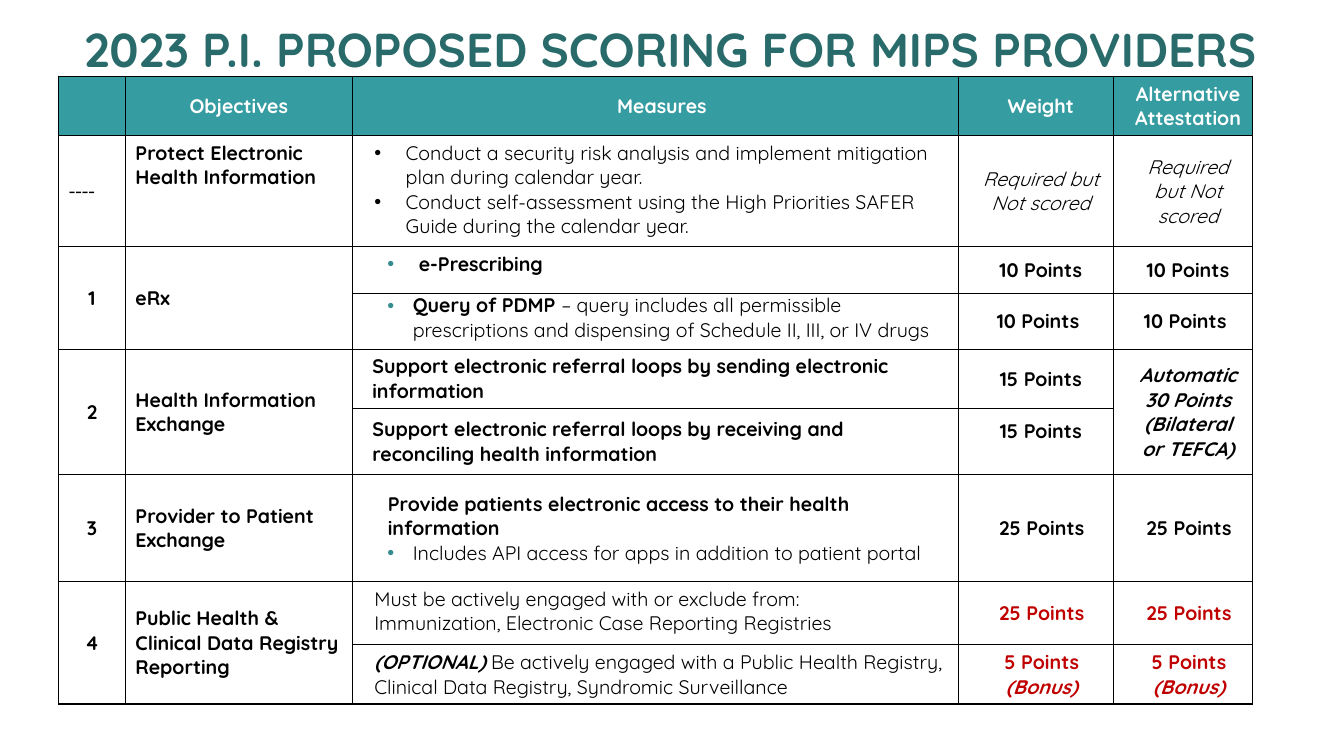
import pptx
import pptx.util
import pptx.dml.color
import pptx.enum.text
import pptx.oxml.ns
import lxml.etree

Cm, Pt = pptx.util.Cm, pptx.util.Pt
ALIGN = pptx.enum.text.PP_ALIGN
ANCHOR = pptx.enum.text.MSO_ANCHOR

# Content
HUES = {"title": "296A6B", "head": "359CA1", "dot": "368D8F", "red": "C00000",
        "ink": "000000", "white": "FFFFFF"}
TITLE = "2023 P.I. PROPOSED SCORING FOR MIPS PROVIDERS"
COLS = [1.68, 5.72, 15.27, 3.91, 3.51]
ROWS = [1.5, 2.8, 1.17, 1.41, 1.49, 1.67, 2.7, 1.59, 1.49]

# Paragraph layouts: left indent, first line, bullet hue
DENTS = {
    "flat": (0, 0, None), "head": (1.3, -0.97, None),
    "near": (0.25, 0, None), "mid": (0.3, 0, None), "far": (0.64, 0, None),
    "black": (1.09, -0.79, "ink"), "wide": (1.42, -0.79, "dot"),
    "teal": (1.27, -0.64, "dot"),
}

# Each cell is a list of (layout, (text, style), ...)
# Styles: b bold, i italic, r red, w white, s serif
BONUS = [("mid", ("5 Points", "br")), ("mid", ("(Bonus)", "bir"))]
TEN = [("near", ("10 Points", "b"))]
TEN_B = [("near", ("10 Points ", "b"))]
FIFTEEN = [("near", ("15 Points", "b"))]
FULL = [("mid", ("25 Points", "b"))]
FULL_R = [("mid", ("25 Points", "br"))]
GRID = [
    [None, [("flat", ("Objectives", "bw"))], [("head", ("Measures", "bw"))],
     [("near", ("Weight", "bw"))],
     [("near", ("Alternative ", "bw")), ("near", ("Attestation", "bw"))]],
    [[("flat", ("----", "s"))],
     [("flat", ("Protect Electronic Health Information", "b"))],
     [("black", ("Conduct a security risk analysis and implement mitigation plan during calendar year.", "")),
      ("black", ("Conduct self-assessment using the High Priorities SAFER Guide during the calendar year.", ""))],
     [("near", ("Required but\vNot scored", "i"))],
     [("near", ("Required but Not scored", "i"))]],
    [[("flat", ("1", "b"))], [("flat", ("eRx", "b"))],
     [("wide", ("e-Prescribing", "b"))], TEN, TEN],
    [None, None,
     [("teal", ("Query of PDMP ", "b"),
       ("– query includes all permissible prescriptions and dispensing of Schedule II, III, or IV drugs", ""))],
     TEN_B, TEN_B],
    [[("flat", ("2", "b"))], [("flat", ("Health Information Exchange", "b"))],
     [("near", ("Support electronic referral loops by sending electronic information", "b"))],
     FIFTEEN,
     [("near", ("Automatic 30 Points", "bi")), ("near", ("(Bilateral or TEFCA)", "bi"))]],
    [None, None,
     [("near", ("Support electronic referral loops by receiving and reconciling health information", "b"))],
     FIFTEEN, None],
    [[("flat", ("3", "b"))], [("flat", ("Provider to Patient Exchange", "b"))],
     [("far", ("Provide patients electronic access to their health information", "b")),
      ("teal", ("Includes API access for apps in addition to patient portal", ""))],
     FULL, FULL],
    [[("flat", ("4", "b"))],
     [("flat", ("Public Health & Clinical Data Registry Reporting", "b"))],
     [("mid", ("Must be actively engaged with or exclude from:", "")),
      ("mid", ("Immunization, Electronic Case Reporting Registries", ""))],
     FULL_R, FULL_R],
    [None, None,
     [("mid", ("(OPTIONAL)", "bi"),
       (" Be actively engaged with a Public Health Registry, Clinical Data Registry, Syndromic Surveillance", ""))],
     BONUS, BONUS],
]
SPANS = [(2, 0), (2, 1), (4, 0), (4, 1), (4, 4), (7, 0), (7, 1)]
TOPS = [(1, 1), (1, 2), (2, 2), (3, 2), (4, 2), (7, 2), (8, 2)]


def rgb(hue):
    return pptx.dml.color.RGBColor.from_string(HUES[hue])


def node(top, tag, **atts):
    return lxml.etree.SubElement(top, pptx.oxml.ns.qn(tag), **atts)


def put(frame, paras, align=ALIGN.LEFT, size=14, hue="ink"):
    frame.word_wrap = True
    for n, (dent, *runs) in enumerate(paras):
        para = frame.paragraphs[0] if n == 0 else frame.add_paragraph()
        para.alignment = align
        left, first, dot = DENTS[dent]
        props = para._p.get_or_add_pPr()
        props.set("marL", str(Cm(left)))
        props.set("indent", str(Cm(first)))
        if dot:
            node(node(props, "a:buClr"), "a:srgbClr", val=HUES[dot])
            node(props, "a:buFont", typeface="Arial")
            node(props, "a:buChar", char="•")
        for text, style in runs:
            for k, part in enumerate(text.split("\v")):
                if k:
                    para.add_line_break()
                run = para.add_run()
                run.text = part
                font = run.font
                font.name = "Times New Roman" if "s" in style else "Quicksand"
                font.size = Pt(size)
                font.bold, font.italic = "b" in style, "i" in style
                tint = "red" if "r" in style else "white" if "w" in style else hue
                font.color.rgb = rgb(tint)


def edge(cell):
    props = cell._tc.get_or_add_tcPr()
    for n, side in enumerate(("a:lnL", "a:lnR", "a:lnT", "a:lnB")):
        line = node(props, side, w=str(Pt(1)))
        node(node(line, "a:solidFill"), "a:srgbClr", val=HUES["ink"])
        props.insert(n, line)


def main():
    deck = pptx.Presentation()
    deck.slide_width, deck.slide_height = Cm(33.87), Cm(19.05)
    slide = deck.slides.add_slide(deck.slide_layouts[6])

    # Scoring table
    table = slide.shapes.add_table(len(ROWS), len(COLS), Cm(1.48), Cm(1.92),
                                   Cm(sum(COLS)), Cm(sum(ROWS))).table
    table.first_row = table.horz_banding = False
    for c, width in enumerate(COLS):
        table.columns[c].width = Cm(width)
    for r, height in enumerate(ROWS):
        table.rows[r].height = Cm(height)
    for r, c in SPANS:
        table.cell(r, c).merge(table.cell(r + 1, c))

    for r, row in enumerate(GRID):
        for c, paras in enumerate(row):
            cell = table.cell(r, c)
            cell.fill.solid()
            cell.fill.fore_color.rgb = rgb("white" if r else "head")
            edge(cell)
            cell.vertical_anchor = ANCHOR.TOP if (r, c) in TOPS else ANCHOR.MIDDLE
            if r == 3:
                cell.margin_top = cell.margin_bottom = 0
            if (r, c) == (5, 3):
                cell.margin_bottom = Cm(0.63)
            if paras:
                plain = r > 0 and c in (1, 2) or (r, c) == (1, 0)
                put(cell.text_frame, paras, align=ALIGN.LEFT if plain else ALIGN.CENTER)

    # Title
    box = slide.shapes.add_textbox(Cm(0.36), Cm(0.38), Cm(33.07), Cm(1.7))
    put(box.text_frame, [("flat", (TITLE, "b"))], align=ALIGN.CENTER,
        size=34, hue="title")
    deck.save("out.pptx")


if __name__ == "__main__":
    main()
